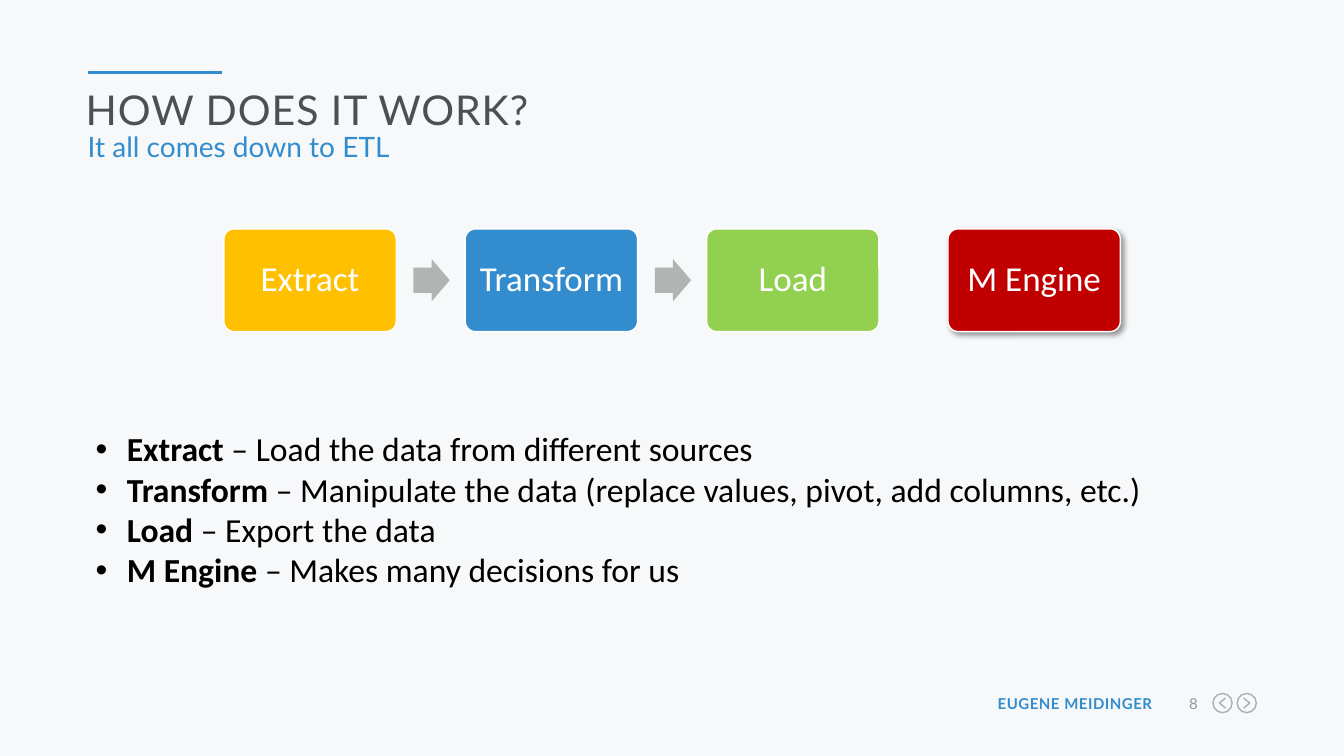
from lxml import etree
from pptx import Presentation, util as u
from pptx.dml.color import RGBColor
from pptx.enum import shapes, text
from pptx.oxml import ns

COLORS = {
    "back": "F6F8FA", "accent": "328CCD", "title": "4B5050", "body": "000000",
    "number": "91969B", "icon": "AAAFB4", "arrow": "B2B3B3", "white": "FFFFFF",
    "extract": "FFC000", "load": "92D050", "engine": "C00000",
}
WIDTH, HEIGHT = 13.33, 7.5
MARGIN = 0.87
STEPS = [("Extract", "extract"), ("Transform", "accent"),
         ("Load", "load"), ("M Engine", "engine")]
NOTES = [
    ("Extract", " – Load the data from different sources"),
    ("Transform", " – Manipulate the data (replace values, pivot, add columns, etc.)"),
    ("Load", " – Export the data"),
    ("M Engine", " – Makes many decisions for us"),
]


def color(name):
    return RGBColor.from_string(COLORS[name])


def inches(*lengths):
    return [u.Inches(length) for length in lengths]


def add_child(parent, tag, **attributes):
    return etree.SubElement(parent, ns.qn(tag), attributes)


def add_span(para, words, size=24, font="Calibri", ink="body", bold=False, spacing=0):
    span = para.add_run()
    span.text = words
    span.font.size, span.font.name, span.font.bold = u.Pt(size), font, bold
    span.font.color.rgb = color(ink)
    if spacing:
        span.font._element.set("spc", str(round(spacing * 100)))


def set_margins(frame, horizontal, vertical):
    frame.margin_left = frame.margin_right = u.Inches(horizontal)
    frame.margin_top = frame.margin_bottom = u.Inches(vertical)


def add_box(page, left, top, width, height, horizontal=0, vertical=0):
    frame = page.shapes.add_textbox(*inches(left, top, width, height)).text_frame
    frame.word_wrap = True
    set_margins(frame, horizontal, vertical)
    return frame


def add_panel(page, kind, left, top, width, height, fill=None, line=None):
    panel = page.shapes.add_shape(kind, *inches(left, top, width, height))
    style_panel(panel, fill, line)
    return panel


def style_panel(panel, fill, line):
    panel.shadow.inherit = False
    for part, name in ((panel.fill, fill), (panel.line.fill, line)):
        if name:
            part.solid()
            part.fore_color.rgb = color(name)
        else:
            part.background()
    if line:
        panel.line.width = u.Pt(1)


def add_shadow(panel):
    effects = panel._element.spPr.find(ns.qn("a:effectLst"))
    shadow = add_child(effects, "a:outerShdw", blurRad=str(u.Pt(4)), dist=str(u.Pt(3)),
                       dir="2700000", algn="tl", rotWithShape="0")
    tint = add_child(shadow, "a:srgbClr", val="000000")
    add_child(tint, "a:alpha", val="40000")


def add_header(page, left, top, width):
    # Accent rule
    rule = page.shapes.add_connector(
        shapes.MSO_CONNECTOR.STRAIGHT, *inches(left, top, left + WIDTH / 10, top))
    rule.line.color.rgb = color("accent")
    rule.line.width = u.Pt(2.25)
    add_child(rule._element.spPr, "a:effectLst")
    # Title and subtitle
    title = add_box(page, left - 0.02, top + 0.12, width, 0.56)
    add_span(title.paragraphs[0], "HOW DOES IT WORK?", size=29.3, font="Lato",
             ink="title", spacing=0.7)
    subtitle = add_box(page, left, top + 0.68, width, 0.48).paragraphs[0]
    subtitle.line_spacing = u.Pt(16)
    add_span(subtitle, "It all comes down to ETL", size=20, font="Lato", ink="accent")


def add_process(page, left, top, width, height):
    pitch = width * 1.4
    for index, (label, fill) in enumerate(STEPS):
        x = left + index * pitch
        step = add_panel(page, shapes.MSO_SHAPE.ROUNDED_RECTANGLE,
                         x, top, width, height, fill, "white")
        step.adjustments[0] = 0.1
        frame = step.text_frame
        frame.word_wrap = True
        frame.vertical_anchor = text.MSO_ANCHOR.MIDDLE
        set_margins(frame, 0.08, 0.13)
        para = frame.paragraphs[0]
        para.alignment = text.PP_ALIGN.CENTER
        para.line_spacing = 0.9
        add_span(para, label, size=25, ink="white")
        if index < 2:
            arrow = add_panel(page, shapes.MSO_SHAPE.RIGHT_ARROW, x + width * 1.1,
                              top + height / 2 - 0.21, 0.36, 0.42, "arrow")
            arrow.adjustments[0], arrow.adjustments[1] = 0.6, 0.5
    add_shadow(step)


def add_notes_list(page, left, top, width, height):
    frame = add_box(page, left, top, width, height, 0.1, 0.05)
    for index, (term, meaning) in enumerate(NOTES):
        para = frame.add_paragraph() if index else frame.paragraphs[0]
        properties = para._p.get_or_add_pPr()
        indent = u.Inches(0.31)
        properties.set("marL", str(indent))
        properties.set("indent", str(-indent))
        add_child(properties, "a:buFont", typeface="Arial")
        add_child(properties, "a:buChar", char="•")
        add_span(para, term, bold=True)
        add_span(para, meaning)


def add_nav_icon(page, left, top, size, direction):
    add_panel(page, shapes.MSO_SHAPE.OVAL, left, top, size, size, line="icon")
    x, y = left + size / 2, top + size / 2
    reach = 0.03 * direction
    points = [(x - reach, y - 0.05), (x + reach, y), (x - reach, y + 0.05)]
    start, *others = [inches(*point) for point in points]
    builder = page.shapes.build_freeform(*start, scale=1.0)
    builder.add_line_segments(others, close=False)
    style_panel(builder.convert_to_shape(), None, "icon")


def add_footer(page, top):
    # Author and page number
    for left, width, words, ink, bold in (
            (9.74, 1.69, "EUGENE MEIDINGER", "accent", True),
            (11.58, 0.3, "8", "number", False)):
        para = add_box(page, left, top, width, 0.18).paragraphs[0]
        para.alignment = text.PP_ALIGN.RIGHT
        add_span(para, words, size=10.7, font="Lato", ink=ink, bold=bold, spacing=0.4)
    # Previous and next icons
    for index, direction in enumerate((-1, 1)):
        add_nav_icon(page, 12.03 + index * 0.24, top - 0.01, 0.19, direction)


def main():
    deck = Presentation()
    deck.slide_width, deck.slide_height = inches(WIDTH, HEIGHT)
    page = deck.slides.add_slide(deck.slide_layouts[6])
    page.background.fill.solid()
    page.background.fill.fore_color.rgb = color("back")
    content = WIDTH - 2 * MARGIN
    add_header(page, MARGIN, 0.72, content)
    add_process(page, 2.22, 2.27, 1.71, 1.02)
    add_notes_list(page, MARGIN - 0.02, 4.2, content, 1.72)
    add_footer(page, 6.89)
    deck.save("out.pptx")


if __name__ == "__main__":
    main()
